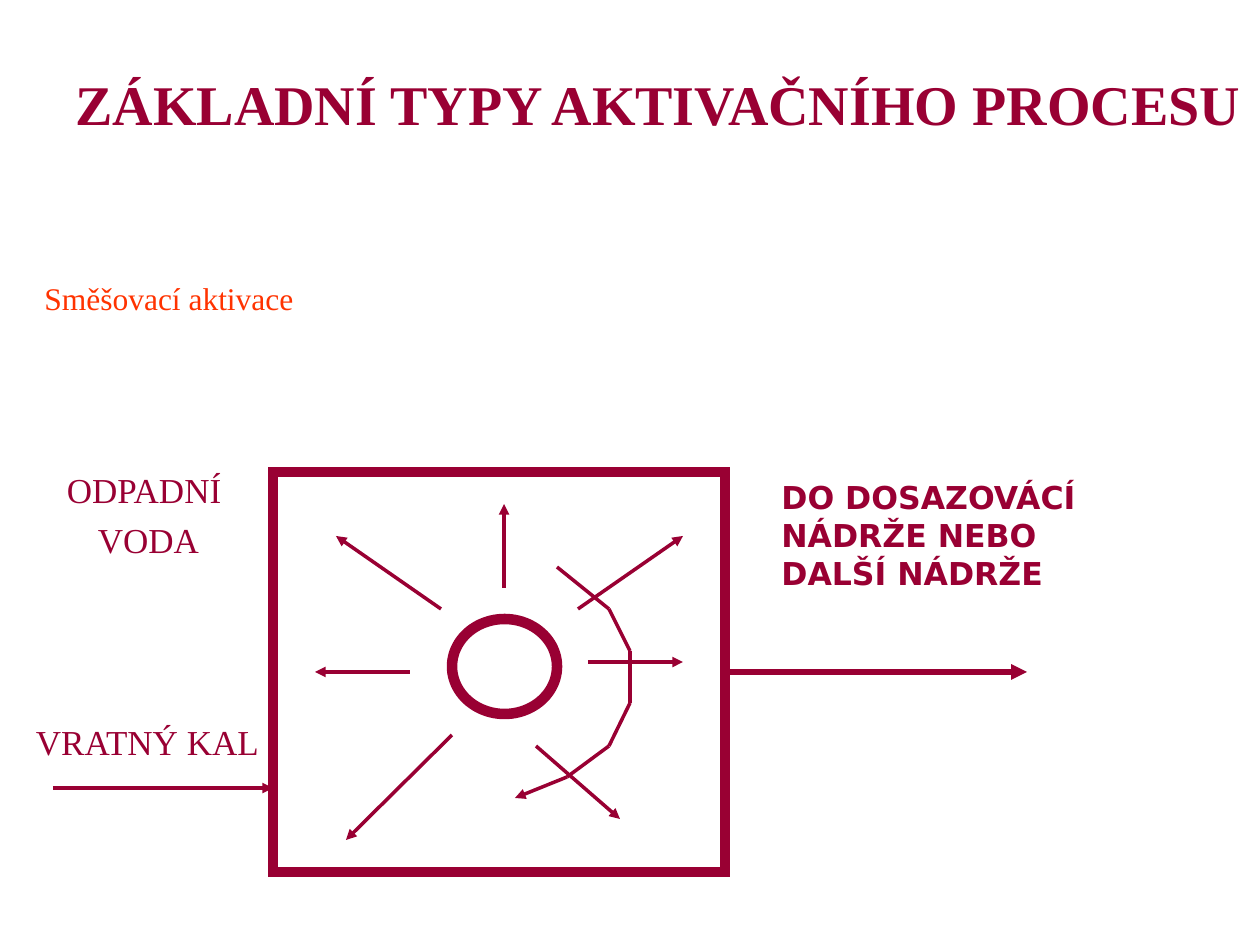
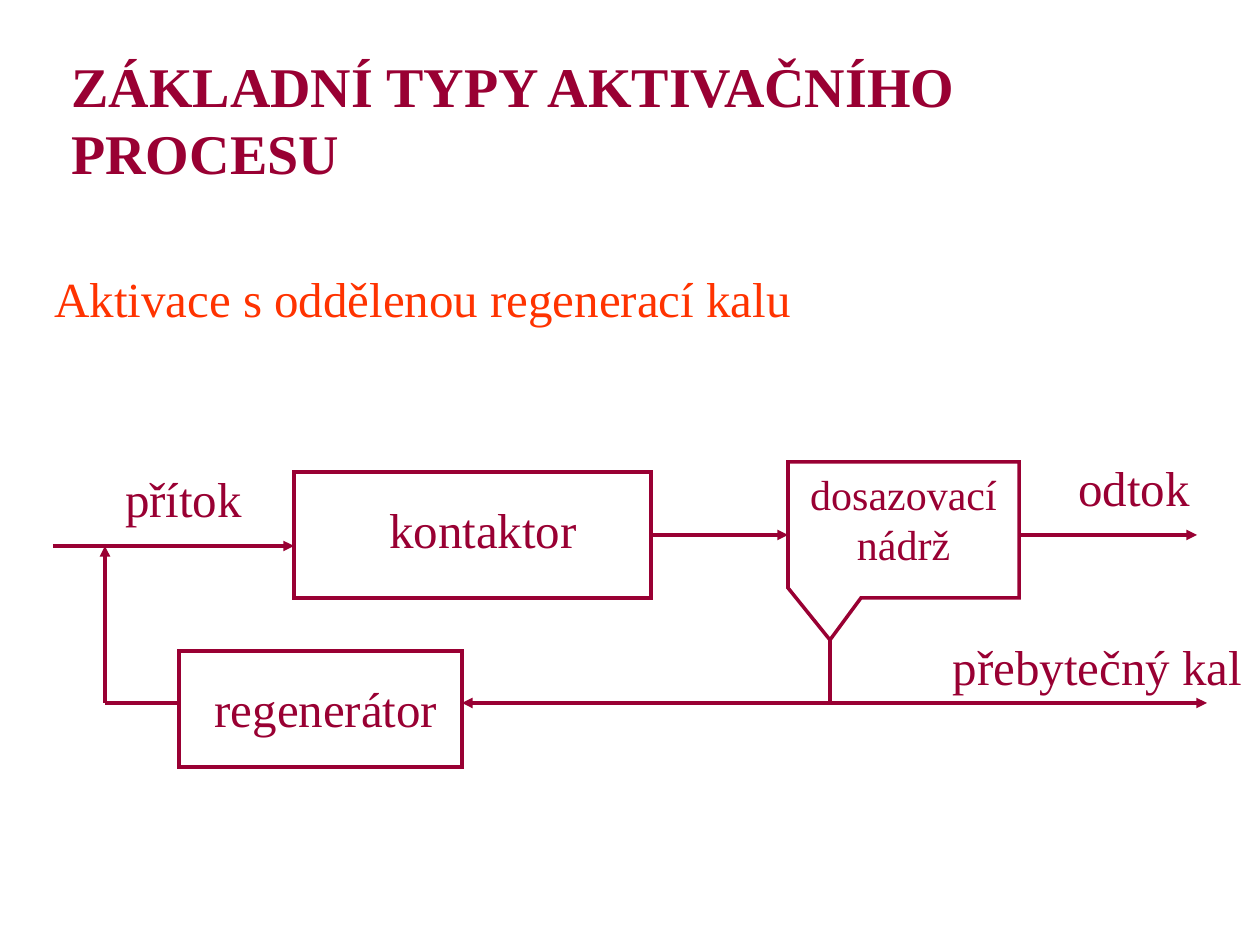
from dataclasses import dataclass
from itertools import pairwise

from lxml.etree import SubElement
from pptx import Presentation
from pptx.dml.color import RGBColor
from pptx.enum.shapes import MSO_CONNECTOR, MSO_SHAPE
from pptx.enum.text import MSO_ANCHOR, PP_ALIGN
from pptx.oxml.ns import qn
from pptx.util import Emu, Pt


@dataclass(frozen=True)
class Theme:
    wine: RGBColor = RGBColor(0x99, 0x00, 0x33)
    orange: RGBColor = RGBColor(0xFF, 0x33, 0x00)
    serif: str = "Times New Roman"
    sans: str = "DejaVu Sans"
    title: int = 32
    large: int = 28
    medium: int = 24
    small: int = 20
    note: int = 18
    thin: int = 2
    pipe: int = 3
    wall: int = 6
    paragraph_gap: int = 5


THEME = Theme()
PX = 914400 / 126
PAGE_SIZE = (1260, 945)
RIGHT_SIDE = 3

# Content: areas are left, top, width, height in px
TITLE = "ZÁKLADNÍ TYPY AKTIVAČNÍHO PROCESU"

MIXING = {
    "title_area": (63, 63, 1197, 158),
    "subtitle": ("Směšovací aktivace", (32, 273, 1187, 60), THEME.note),
    "labels": [
        (["ODPADNÍ ", "VODA"], (53, 462, 191, 105)),
        (["VRATNÝ KAL"], (21, 714, 253, 54)),
    ],
    "outlet_label": (["DO DOSAZOVÁCÍ", "NÁDRŽE NEBO", "DALŠÍ NÁDRŽE"],
                     (769, 472, 461, 126)),
    "tank": (273, 472, 452, 400),
    "aerator": (452, 619, 105, 95),
    "currents": [
        ((536, 746), (620, 819)),
        ((452, 735), (346, 840)),
        ((588, 662), (683, 662)),
        ((578, 609), (683, 536)),
        ((504, 588), (504, 504)),
        ((441, 609), (336, 536)),
        ((410, 672), (315, 672)),
    ],
    "swirl": [(557, 567), (609, 609), (630, 651), (630, 703),
              (609, 746), (567, 777), (515, 798)],
    "inlet_start": (53, 788),
    "outlet_end": 1027,
}

REGENERATION = {
    "title_area": (59, 45, 1143, 158),
    "subtitle": ("Aktivace s oddělenou regenerací kalu",
                 (42, 262, 1218, 72), THEME.large),
    "labels": [
        ("přebytečný kal", (935, 630, 325, 72), THEME.large),
        ("přítok", (94, 462, 179, 72), THEME.large),
        ("kontaktor", (357, 493, 252, 72), THEME.large),
        ("odtok", (1008, 451, 252, 72), THEME.large),
        ("dosazovací nádrž", (767, 462, 273, 113), THEME.medium),
        ("regenerátor", (200, 672, 252, 72), THEME.large),
    ],
    "contactor": (294, 472, 357, 126),
    "regenerator": (179, 651, 283, 116),
    "settling_tank": [(788, 462), (1019, 462), (1019, 598),
                      (861, 598), (830, 640), (788, 588)],
    "inflow_start": (53, 546),
    "return_x": 105,
    "sludge_y": 703,
    "outflow_end": 1197,
    "excess_end": 1207,
}


# Drawing tools
def emu(lengths):
    return [Emu(round(length * PX)) for length in lengths]


def right_of(area):
    left, _, width, _ = area
    return left + width


def middle_of(area):
    _, top, _, height = area
    return top + height // 2


def add_text(page, lines, area, size, color=THEME.wine, font=THEME.serif,
             bold=False, align=PP_ALIGN.LEFT, gap=0):
    frame = page.shapes.add_textbox(*emu(area)).text_frame
    frame.word_wrap = True
    frame.vertical_anchor = MSO_ANCHOR.TOP
    for number, line in enumerate(lines):
        para = frame.add_paragraph() if number else frame.paragraphs[0]
        para.alignment = align
        if number and gap:
            para.space_before = Pt(gap)
        span = para.add_run()
        span.text = line
        span.font.name = font
        span.font.size = Pt(size)
        span.font.bold = bold
        span.font.color.rgb = color


def style_line(shape, width):
    shape.line.color.rgb = THEME.wine
    shape.line.width = Pt(width)
    return shape._element.spPr.find(qn("a:ln"))


def style_outline(shape, width):
    shape.shadow.inherit = False
    shape.fill.background()
    SubElement(style_line(shape, width), qn("a:miter"), lim="800000")
    return shape


def add_outlined(page, kind, area, width=THEME.thin):
    return style_outline(page.shapes.add_shape(kind, *emu(area)), width)


def add_line(page, start, end, arrow=True, width=THEME.thin):
    line = page.shapes.add_connector(MSO_CONNECTOR.STRAIGHT, *emu(start + end))
    stroke = style_line(line, width)
    if arrow:
        SubElement(stroke, qn("a:tailEnd"), type="triangle")
    SubElement(line._element.spPr, qn("a:effectLst"))
    return line


def add_page(deck, content):
    page = deck.slides.add_slide(deck.slide_layouts[6])
    add_text(page, [TITLE], content["title_area"], THEME.title, bold=True)
    subtitle, area, size = content["subtitle"]
    add_text(page, [subtitle], area, size, THEME.orange)
    return page


def draw_mixing(deck):
    page = add_page(deck, MIXING)

    # Tank with central aerator
    tank_area = MIXING["tank"]
    tank = add_outlined(page, MSO_SHAPE.RECTANGLE, tank_area, THEME.wall)
    add_outlined(page, MSO_SHAPE.OVAL, MIXING["aerator"], THEME.wall)

    # Currents and swirl, arrowhead on the last swirl segment
    for start, end in MIXING["currents"]:
        add_line(page, start, end)
    swirl = MIXING["swirl"]
    for start, end in pairwise(swirl):
        add_line(page, start, end, arrow=end == swirl[-1])

    # Inlet reaches the left wall, outlet leaves mid right wall
    inlet_start = MIXING["inlet_start"]
    add_line(page, inlet_start, (tank_area[0], inlet_start[1]))
    outlet_y = middle_of(tank_area)
    outlet = add_line(page, (right_of(tank_area), outlet_y),
                      (MIXING["outlet_end"], outlet_y), width=THEME.pipe)
    outlet.begin_connect(tank, RIGHT_SIDE)

    # Labels
    for lines, area in MIXING["labels"]:
        add_text(page, lines, area, THEME.small, align=PP_ALIGN.CENTER,
                 gap=THEME.paragraph_gap)
    lines, area = MIXING["outlet_label"]
    add_text(page, lines, area, THEME.note, font=THEME.sans, bold=True)


def draw_regeneration(deck):
    page = add_page(deck, REGENERATION)
    contactor_area = REGENERATION["contactor"]
    regenerator_area = REGENERATION["regenerator"]
    settling_points = REGENERATION["settling_tank"]

    # Tanks
    contactor = add_outlined(page, MSO_SHAPE.RECTANGLE, contactor_area)
    add_outlined(page, MSO_SHAPE.RECTANGLE, regenerator_area)
    first, *others = settling_points
    builder = page.shapes.build_freeform(*first, scale=PX)
    builder.add_line_segments(others, close=True)
    style_outline(builder.convert_to_shape(), THEME.thin)

    # Water line: inflow, contactor to settling tank, outflow
    inflow_start = REGENERATION["inflow_start"]
    inflow_y = inflow_start[1]
    water_y = middle_of(contactor_area)
    settling_left = min(x for x, _ in settling_points)
    settling_right = max(x for x, _ in settling_points)
    add_line(page, inflow_start, (contactor_area[0], inflow_y))
    transfer = add_line(page, (right_of(contactor_area), water_y),
                        (settling_left, water_y))
    transfer.begin_connect(contactor, RIGHT_SIDE)
    add_line(page, (settling_right, water_y),
             (REGENERATION["outflow_end"], water_y))

    # Sludge line: down from the settling tip, then both ways
    tip = max(settling_points, key=lambda point: point[1])
    sludge_y = REGENERATION["sludge_y"]
    branch = (tip[0], sludge_y)
    add_line(page, tip, branch, arrow=False)
    add_line(page, branch, (REGENERATION["excess_end"], sludge_y))
    add_line(page, branch, (right_of(regenerator_area), sludge_y))

    # Return from the regenerator up to the inflow
    corner = (REGENERATION["return_x"], sludge_y)
    add_line(page, (regenerator_area[0], sludge_y), corner, arrow=False)
    add_line(page, corner, (corner[0], inflow_y))

    # Labels
    for label, area, size in REGENERATION["labels"]:
        add_text(page, [label], area, size, align=PP_ALIGN.CENTER)


def main():
    deck = Presentation()
    deck.slide_width, deck.slide_height = emu(PAGE_SIZE)
    draw_mixing(deck)
    draw_regeneration(deck)
    deck.save("out.pptx")


if __name__ == "__main__":
    main()
